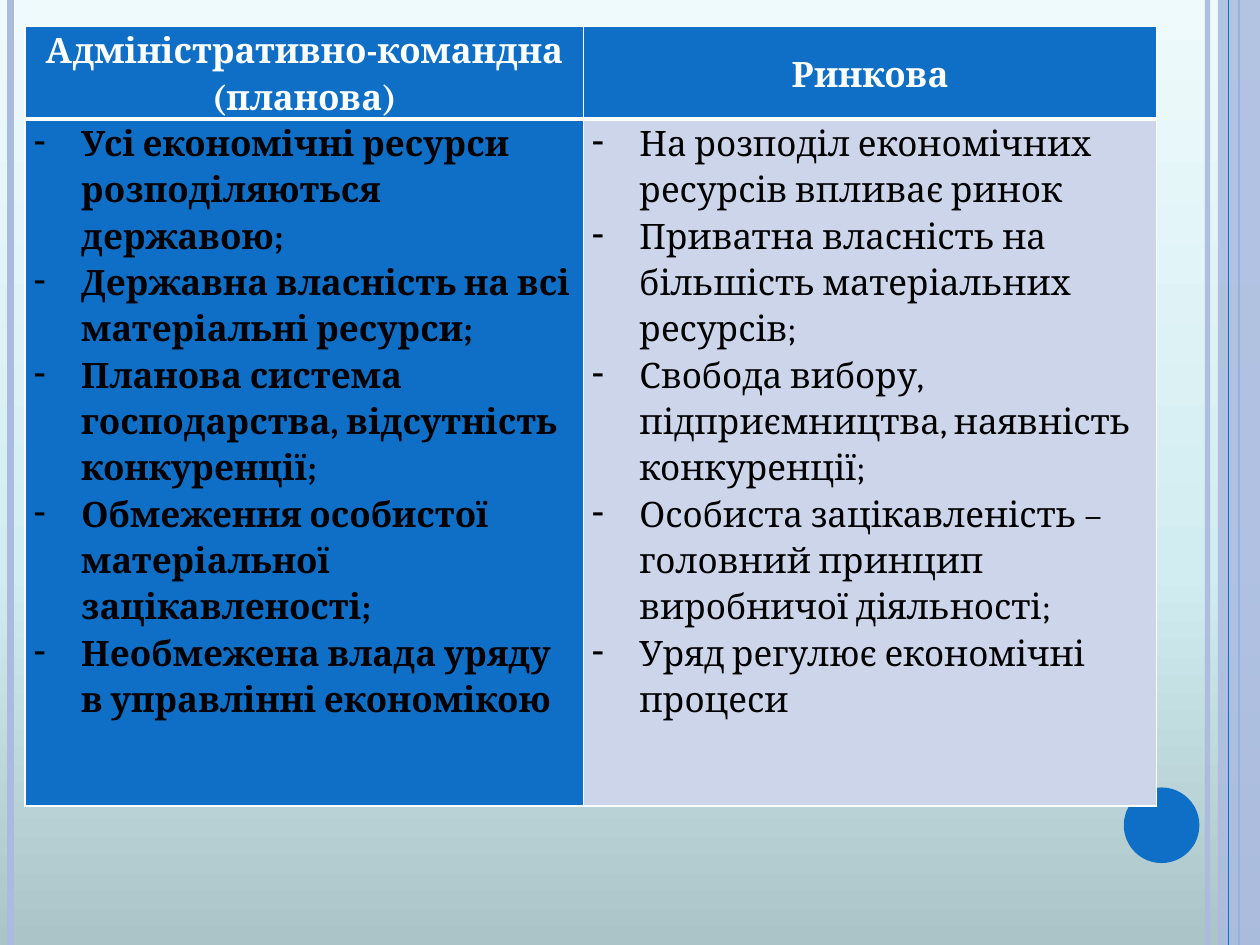
"""Builds a slide comparing the command and the market economy in a table."""
import copy

import pptx
import pptx.dml.color
import pptx.enum.shapes
import pptx.enum.text
import pptx.oxml
import pptx.oxml.ns
import pptx.util

Pt = pptx.util.Pt
qn = pptx.oxml.ns.qn
NS = pptx.oxml.ns.nsdecls("a")

COLORS = {"blue": "0F6FC6", "lilac": "ABBBDF", "pale": "CCD5EA",
          "white": "FFFFFF", "black": "000000"}
BACKGROUND = [(0, "AAC4C7"), (0.4, "D2EDF1"), (1, "EEFAFC")]
HEADERS = ["Адміністративно-командна (планова)", "Ринкова"]
COLUMNS = [
    ["Усі економічні ресурси розподіляються державою;",
     "Державна власність на всі матеріальні ресурси;",
     "Планова система господарства, відсутність конкуренції;",
     "Обмеження особистої матеріальної зацікавленості;",
     "Необмежена влада уряду в управлінні економікою"],
    ["На розподіл економічних ресурсів впливає ринок",
     "Приватна власність на більшість матеріальних ресурсів;",
     "Свобода вибору, підприємництва, наявність конкуренції;",
     "Особиста зацікавленість – головний принцип виробничої діяльності;",
     "Уряд регулює економічні процеси"],
]
LEFT_RULES = [(690, "lilac", 3, 93), (6, "lilac", 4.5, 100), (708, "blue", 1.5, 100)]
RIGHT_RULES = [(702, "blue", 0.75, 100)]
COL_WIDTHS = [319, 327.6]
ROW_HEIGHTS = [52.6, 392.4]
WIDTH, HEIGHT = 720, 540


def rgb(name):
    return pptx.dml.color.RGBColor.from_string(COLORS.get(name, name))


def set_alpha(element, percent):
    color = element.find(".//" + qn("a:srgbClr"))
    color.append(pptx.oxml.parse_xml(f'<a:alpha {NS} val="{percent * 1000}"/>'))


def add_rules(s, rules):
    for x, color, width, alpha in rules:
        rule = s.shapes.add_connector(
            pptx.enum.shapes.MSO_CONNECTOR.STRAIGHT, Pt(x), 0, Pt(x), Pt(HEIGHT))
        rule.line.color.rgb = rgb(color)
        rule.line.width = Pt(width)
        sp_pr = rule.element.spPr
        sp_pr.append(pptx.oxml.parse_xml(f"<a:effectLst {NS}/>"))
        if alpha < 100:
            set_alpha(sp_pr, alpha)


def add_solid(s, kind, box, color):
    sp = s.shapes.add_shape(kind, *map(Pt, box))
    sp.shadow.inherit = False
    sp.fill.solid()
    sp.fill.fore_color.rgb = rgb(color)
    sp.line.fill.background()
    return sp


def format_cell(cell, texts, color, fill, bold, borders):
    cell.margin_left = cell.margin_right = Pt(5)
    cell.margin_top = cell.margin_bottom = 0
    cell.fill.solid()
    cell.fill.fore_color.rgb = rgb(fill)
    tf = cell.text_frame
    tf.text = "\n".join(texts)
    for p in tf.paragraphs:
        p.line_spacing = 1.15
        p.font.name = "Cambria"
        p.font.size = Pt(20)
        p.font.bold = bold
        p.font.color.rgb = rgb(color)
    tc_pr = cell._tc.get_or_add_tcPr()
    for i, (side, width) in enumerate(zip("LRTB", borders)):
        tc_pr.insert(i, pptx.oxml.parse_xml(
            f'<a:ln{side} {NS} w="{Pt(width)}"><a:solidFill>'
            f'<a:srgbClr val="{COLORS["white"]}"/></a:solidFill></a:ln{side}>'))


def add_bullet(p):
    p_pr = p._p.get_or_add_pPr()
    p_pr.set("marL", str(Pt(27)))
    p_pr.set("indent", str(Pt(-27)))
    bullet = pptx.oxml.parse_xml(f'<a:buChar {NS} char="-"/>')
    p_pr.find(qn("a:defRPr")).addprevious(bullet)


def add_background(s):
    fill = s.background.fill
    fill.gradient()
    fill.gradient_angle = 90
    stops = s.element.find(".//" + qn("a:gsLst"))
    stops.append(copy.deepcopy(stops[0]))
    for stop, (position, color) in zip(fill.gradient_stops, BACKGROUND):
        stop.position = position
        stop.color.rgb = rgb(color)


def add_comparison(s):
    table = s.shapes.add_table(2, 2, Pt(14.4), Pt(15.1), Pt(sum(COL_WIDTHS)),
                               Pt(sum(ROW_HEIGHTS))).table
    for row, height in zip(table.rows, ROW_HEIGHTS):
        row.height = Pt(height)
    for i, (header, items) in enumerate(zip(HEADERS, COLUMNS)):
        table.columns[i].width = Pt(COL_WIDTHS[i])
        head, body = table.cell(0, i), table.cell(1, i)
        format_cell(head, [header], "white", "blue", True, (1, 1, 1, 3))
        head.vertical_anchor = pptx.enum.text.MSO_ANCHOR.MIDDLE
        head.text_frame.paragraphs[0].alignment = pptx.enum.text.PP_ALIGN.CENTER
        format_cell(body, items, "black", ("blue", "pale")[i], i == 0, (1, 1, 3, 1))
        for p in body.text_frame.paragraphs:
            add_bullet(p)


def main():
    prs = pptx.Presentation()
    prs.slide_width, prs.slide_height = Pt(WIDTH), Pt(HEIGHT)
    s = prs.slides.add_slide(prs.slide_layouts[6])
    shapes = pptx.enum.shapes.MSO_SHAPE
    add_background(s)
    add_rules(s, LEFT_RULES)
    band = add_solid(s, shapes.RECTANGLE, (696, 0, 24, HEIGHT), "lilac")
    set_alpha(band.element.spPr, 87)
    add_rules(s, RIGHT_RULES)
    add_solid(s, shapes.OVAL, (642.2, 450, 43.2, 43.2), "blue")
    add_comparison(s)
    prs.save("out.pptx")


if __name__ == "__main__":
    main()
